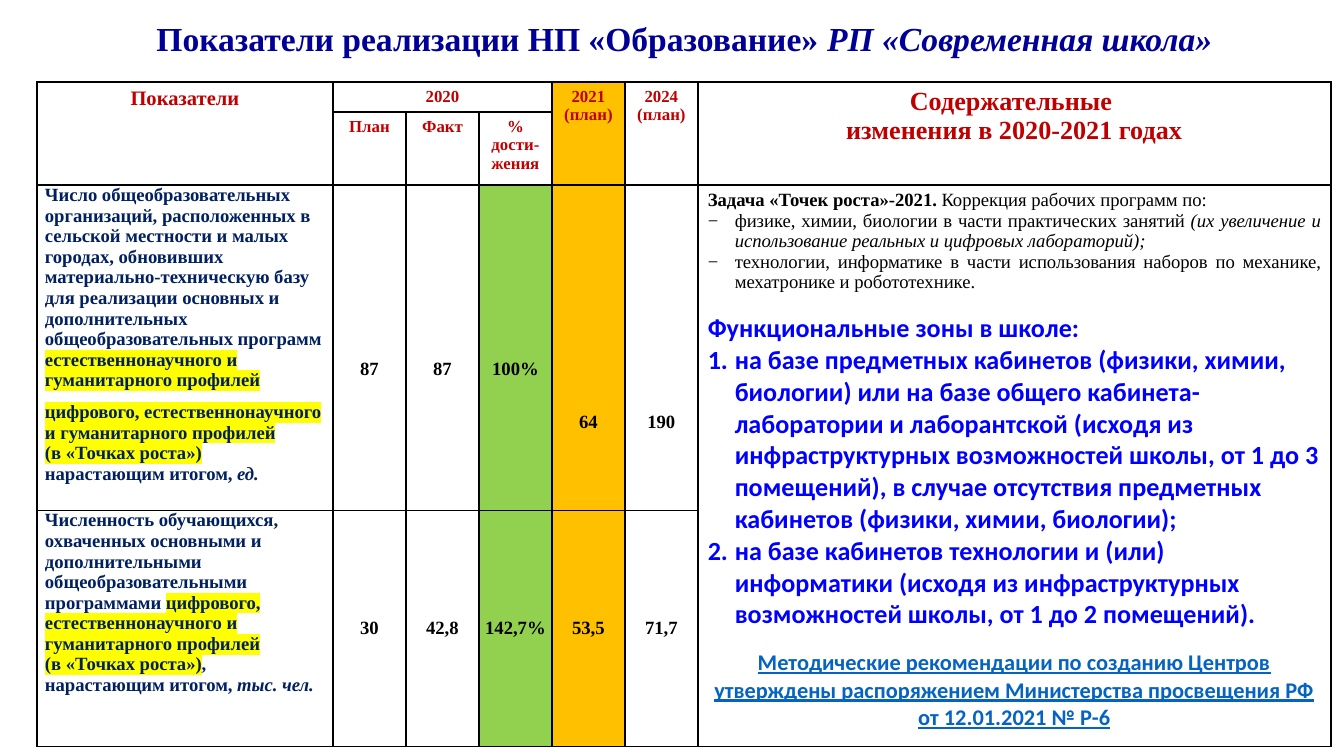
import pptx
import pptx.util
import pptx.dml.color
import pptx.enum.text
import lxml.etree
import pptx.oxml.ns

PX = 914400 / 134.4
ALIGN = pptx.enum.text.PP_ALIGN
ANCHOR = pptx.enum.text.MSO_ANCHOR
LEFT, MID, JUST = ALIGN.LEFT, ALIGN.CENTER, ALIGN.JUSTIFY
RED, NAVY, BLUE, BLACK = "C00000", "002060", "0000FF", "000000"
GOLD, GREEN = "FFC000", "92D050"


def node(tag, **attrs):
    return lxml.etree.Element(pptx.oxml.ns.qn(tag), attrs)


# A paragraph is (align, bullet, space before, runs); a run is (text, size, colour, flags).
# Flags: b bold, i italic, u underlined, h highlighted, c Calibri
def write(frame, paras):
    for n, (align, mark, gap, runs) in enumerate(paras):
        para = frame.paragraphs[0] if n == 0 else frame.add_paragraph()
        para.alignment = align
        para.space_before = pptx.util.Pt(gap)
        if mark:
            props = para._p.get_or_add_pPr()
            props.set("marL", str(round(27 * PX)))
            props.set("indent", str(round(-27 * PX)))
            if mark == "1.":
                props.append(node("a:buAutoNum", type="arabicPeriod"))
            else:
                tint = node("a:buClr")
                tint.append(node("a:srgbClr", val=BLACK))
                props.append(tint)
                props.append(node("a:buFont", typeface="Times New Roman"))
                props.append(node("a:buChar", char=mark))
        for text, size, color, flags in runs:
            run = para.add_run()
            run.text = text
            font = run.font
            font.size = pptx.util.Pt(size)
            font.bold, font.italic, font.underline = "b" in flags, "i" in flags, "u" in flags
            font.name = "Calibri" if "c" in flags else "Times New Roman"
            font.color.rgb = pptx.dml.color.RGBColor.from_string(color)
            if "h" in flags:
                glow = node("a:highlight")
                glow.append(node("a:srgbClr", val="FFFF00"))
                run._r.rPr.find(pptx.oxml.ns.qn("a:solidFill")).addnext(glow)


deck = pptx.Presentation()
deck.slide_width, deck.slide_height = round(1344 * PX), round(756 * PX)
slide = deck.slides.add_slide(deck.slide_layouts[6])

# Title
box = slide.shapes.add_textbox(*[round(v * PX) for v in (129, 8, 1111, 61)])
frame = box.text_frame
frame.word_wrap = True
frame.vertical_anchor = ANCHOR.MIDDLE
frame.margin_left = frame.margin_right = round(10 * PX)
frame.margin_top = frame.margin_bottom = round(5 * PX)
write(frame, [(MID, "", 0, [
    ("Показатели реализации НП «Образование» ", 18, "000099", "b"),
    ("РП «Современная школа»", 18, "000099", "bi")])])

# Table grid
cols = [296] + [73] * 5 + [633]
rows = [30, 70, 316, 236]
spot = [round(v * PX) for v in (37, 82, sum(cols), sum(rows))]
table = slide.shapes.add_table(len(rows), len(cols), *spot).table
table.first_row = table.horz_banding = False
for col, wide in zip(table.columns, cols):
    col.width = round(wide * PX)
for row, high in zip(table.rows, rows):
    row.height = round(high * PX)

# Borders and fills
for r in range(len(rows)):
    for c in range(len(cols)):
        cell = table.cell(r, c)
        fill = GOLD if c == 4 else GREEN if c == 3 and r > 1 else None
        if fill:
            cell.fill.solid()
            cell.fill.fore_color.rgb = pptx.dml.color.RGBColor.from_string(fill)
        else:
            cell.fill.background()
        for n, side in enumerate("LRTB"):
            line = node("a:ln" + side, w="12700")
            paint = node("a:solidFill")
            paint.append(node("a:srgbClr", val=BLACK))
            line.append(paint)
            cell._tc.get_or_add_tcPr().insert(n, line)

# Merged cells
for r, c, end, last in [(0, 0, 1, 0), (0, 1, 0, 3), (0, 4, 1, 4),
                        (0, 5, 1, 5), (0, 6, 1, 6), (2, 6, 3, 6)]:
    table.cell(r, c).merge(table.cell(end, last))

# Header cells
heads = [
    (0, 0, 11, ["Показатели"]), (0, 1, 9, ["2020"]),
    (0, 4, 9, ["2021 (план)"]), (0, 5, 9, ["2024 (план)"]),
    (0, 6, 14, ["Содержательные ", "изменения в 2020-2021 годах"]),
    (1, 1, 9, ["План"]), (1, 2, 9, ["Факт"]), (1, 3, 9, ["% дости-", "жения"]),
]
for r, c, size, lines in heads:
    cell = table.cell(r, c)
    cell.margin_left = cell.margin_right = round(11 * PX)
    cell.margin_top = cell.margin_bottom = round(5 * PX)
    write(cell.text_frame, [(MID, "", 0, [(text, size, RED, "b")]) for text in lines])

# Indicator names
names = {
    2: [
        (0, [("Число общеобразовательных организаций, расположенных в сельской местности "
              "и малых городах, обновивших материально-техническую базу для реализации "
              "основных и дополнительных общеобразовательных программ", "b")]),
        (0, [("естественнонаучного и гуманитарного профилей", "bh")]),
        (6, [("цифрового, естественнонаучного", "bh")]),
        (0, [("и гуманитарного профилей", "bh")]),
        (0, [("(в «Точках роста»)", "bh")]),
        (0, [("нарастающим итогом, ", "b"), ("ед.", "bi")]),
    ],
    3: [
        (0, [("Численность обучающихся, охваченных основными и дополнительными "
              "общеобразовательными программами ", "b"),
             ("цифрового, естественнонаучного и гуманитарного профилей", "bh")]),
        (0, [("(в «Точках роста»)", "bh"), (",", "b")]),
        (0, [("нарастающим итогом, ", "b"), ("тыс. чел.", "bi")]),
    ],
}
for r, paras in names.items():
    cell = table.cell(r, 0)
    cell.margin_left, cell.margin_right = round(8 * PX), round(4 * PX)
    cell.margin_top = cell.margin_bottom = 0
    write(cell.text_frame, [(LEFT, "", gap, [(text, 10, NAVY, flags) for text, flags in runs])
                            for gap, runs in paras])

# Values; the top margin pushes the first row's figures down
values = {2: ["87", "87", "100%", "64", "190"],
          3: ["30", "42,8", "142,7%", "53,5", "71,7"]}
drops = {2: [43, 43, 43, 150, 150], 3: [0] * 5}
for r, texts in values.items():
    for c, (text, drop) in enumerate(zip(texts, drops[r]), 1):
        cell = table.cell(r, c)
        cell.vertical_anchor = ANCHOR.MIDDLE
        cell.margin_left = cell.margin_right = cell.margin_bottom = 0
        cell.margin_top = round(drop * PX)
        write(cell.text_frame, [(MID, "", 0, [(text, 10, BLACK, "b")])])

# Changes in content
cell = table.cell(2, 6)
cell.margin_left = cell.margin_right = round(10 * PX)
cell.margin_top = cell.margin_bottom = round(5 * PX)
write(cell.text_frame, [
    (JUST, "", 0, [("Задача «Точек роста»-2021. ", 10, BLACK, "b"),
                   ("Коррекция рабочих программ по: ", 10, BLACK, "")]),
    (JUST, "−", 0, [("физике, химии, биологии в части практических занятий ", 10, BLACK, ""),
                    ("(их увеличение и использование реальных и цифровых лабораторий);",
                     10, BLACK, "i")]),
    (JUST, "−", 0, [("технологии, информатике в части использования наборов по механике, "
                     "мехатронике и робототехнике.", 10, BLACK, "")]),
    (LEFT, "", 9, [("Функциональные зоны в школе:", 14, BLUE, "bc")]),
    (LEFT, "1.", 0, [("на базе предметных кабинетов (физики, химии, биологии) или на базе "
                      "общего кабинета-лаборатории и лаборантской (исходя из "
                      "инфраструктурных возможностей школы, от 1 до 3 помещений), в случае "
                      "отсутствия предметных кабинетов (физики, химии, биологии);",
                      14, BLUE, "bc")]),
    (LEFT, "1.", 0, [("на базе кабинетов технологии и (или) информатики (исходя из "
                      "инфраструктурных возможностей школы, от 1 до 2 помещений).",
                      14, BLUE, "bc")]),
    (MID, "", 10, [("Методические рекомендации по созданию Центров утверждены распоряжением "
                    "Министерства просвещения РФ от 12.01.2021 № Р-6", 12, "0563C1", "bcu")]),
])
cell.text_frame.paragraphs[3].line_spacing = 1.1

deck.save("out.pptx")
